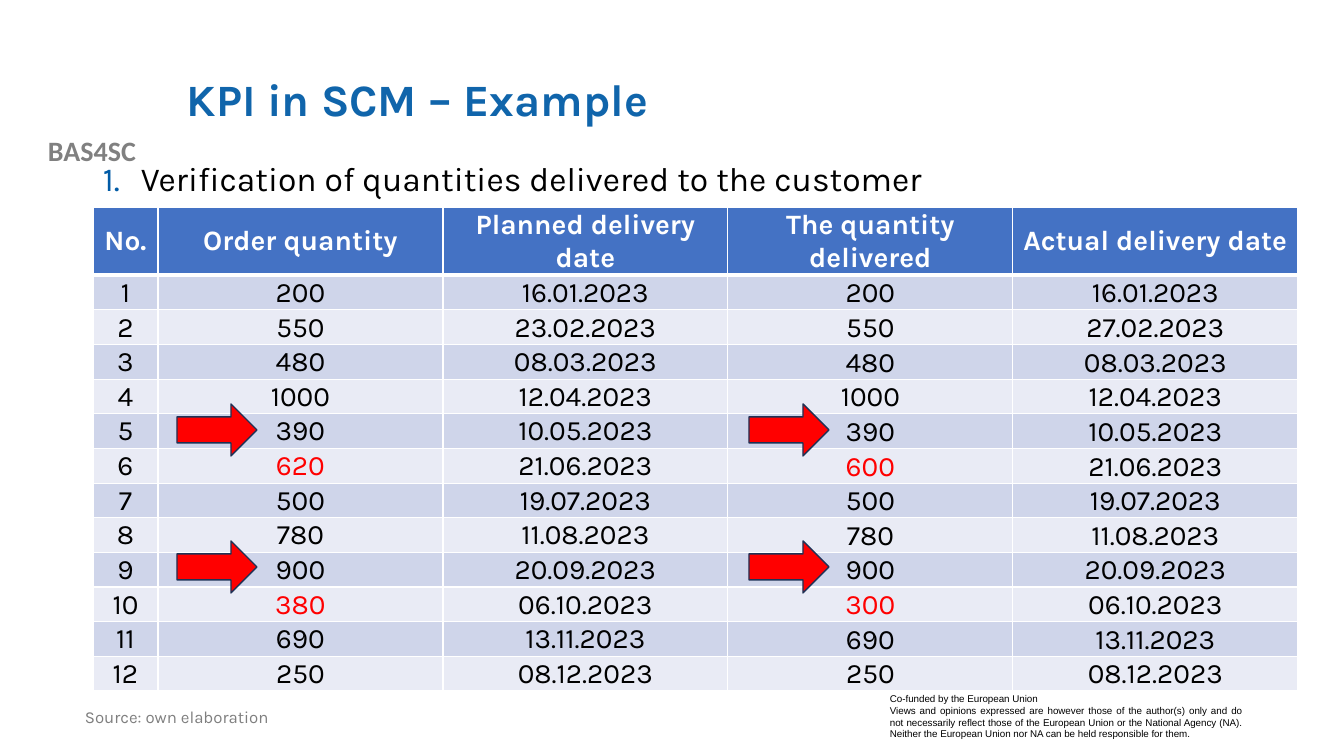
from lxml.etree import SubElement
from pptx import Presentation
from pptx.dml.color import RGBColor
from pptx.enum.shapes import MSO_SHAPE
from pptx.enum.text import MSO_ANCHOR, PP_ALIGN
from pptx.oxml.ns import qn
from pptx.util import Pt

COLORS = {
    "white": "FFFFFF", "black": "000000", "title": "1065AB", "number": "015BA6",
    "project": "808080", "source": "7F7F7F", "header": "4472C4",
    "odd": "CFD5EA", "even": "E9EBF5", "red": "FF0000", "outline": "1E3256",
}

PROJECT = "BAS4SC"
FUNDING = [
    "Co-funded by the European Union",
    "Views and opinions expressed are however those of the author(s) only and do not "
    "necessarily reflect those of the European Union or the National Agency (NA). "
    "Neither the European Union nor NA can be held responsible for them.",
]
TITLE = "KPI in SCM – Example"
TOPIC = "Verification of quantities delivered to the customer"
SOURCE = "Source: own elaboration"

HEADERS = ["No.", "Order quantity", "Planned delivery date",
           "The quantity delivered", "Actual delivery date"]
ORDERS = [  # ordered, planned date, delivered, actual date
    (200, "16.01.2023", 200, "16.01.2023"),
    (550, "23.02.2023", 550, "27.02.2023"),
    (480, "08.03.2023", 480, "08.03.2023"),
    (1000, "12.04.2023", 1000, "12.04.2023"),
    (390, "10.05.2023", 390, "10.05.2023"),
    (620, "21.06.2023", 600, "21.06.2023"),
    (500, "19.07.2023", 500, "19.07.2023"),
    (780, "11.08.2023", 780, "11.08.2023"),
    (900, "20.09.2023", 900, "20.09.2023"),
    (380, "06.10.2023", 300, "06.10.2023"),
    (690, "13.11.2023", 690, "13.11.2023"),
    (250, "08.12.2023", 250, "08.12.2023"),
]
QUANTITY_COLS = (1, 3)

TABLE_LEFT, TABLE_TOP = 93, 207
COL_WIDTHS = [65] + [285] * 4
ROW_HEIGHTS = [64] + [33] * len(ORDERS)
ARROW_LEFTS, ARROW_TOPS = (177, 749), (404, 541)
ARROW_SIZE = (80, 52)


def px(n):
    return round(n * 914400 / 100.8)


def rgb(name):
    return RGBColor.from_string(COLORS[name])


def set_all(obj, values):
    for name, value in values.items():
        setattr(obj, name, value)


def write(p, text, color, size, font="Karla", bold=False, **para):
    set_all(p, para)
    r = p.add_run()
    r.text = text
    set_all(r.font, {"name": font, "size": Pt(size), "bold": bold})
    r.font.color.rgb = rgb(color)


def add_text(slide, box, text, color, size, anchor=MSO_ANCHOR.TOP, **fmt):
    sp = slide.shapes.add_textbox(*map(px, box))
    tf = sp.text_frame
    set_all(tf, {"word_wrap": True, "vertical_anchor": anchor})
    write(tf.paragraphs[0], text, color, size, **fmt)
    return tf.paragraphs[0]


def add_number(p, hang):
    pPr = p._p.get_or_add_pPr()
    pPr.set("marL", str(px(hang)))
    pPr.set("indent", str(-px(hang)))
    clr = SubElement(pPr, qn("a:buClr"))
    SubElement(clr, qn("a:srgbClr"), val=COLORS["number"])
    SubElement(pPr, qn("a:buFont"), typeface="Karla")
    SubElement(pPr, qn("a:buAutoNum"), type="arabicPeriod")


def add_preset(slide, kind, box, fill, line=None):
    sp = slide.shapes.add_shape(kind, *map(px, box))
    sp.shadow.inherit = False
    sp.fill.solid()
    sp.fill.fore_color.rgb = rgb(fill)
    if line:
        sp.line.color.rgb = rgb(line)
        sp.line.width = Pt(1)
    else:
        sp.line.fill.background()
    return sp


def set_borders(cell, **widths):
    tcPr = cell._tc.get_or_add_tcPr()
    for side in "LRTB":
        ln = SubElement(tcPr, qn(f"a:ln{side}"), w=str(Pt(widths.get(side, 1))))
        fill = SubElement(ln, qn("a:solidFill"))
        SubElement(fill, qn("a:srgbClr"), val=COLORS["white"])


def add_order_table(slide):
    rows = [HEADERS] + [(n, *order) for n, order in enumerate(ORDERS, 1)]
    table = slide.shapes.add_table(
        len(rows), len(HEADERS), px(TABLE_LEFT), px(TABLE_TOP),
        px(sum(COL_WIDTHS)), px(sum(ROW_HEIGHTS))).table
    for col, width in zip(table.columns, COL_WIDTHS):
        col.width = px(width)
    for i, (row, values) in enumerate(zip(table.rows, rows)):
        row.height = px(ROW_HEIGHTS[i])
        header = i == 0
        fill = "header" if header else "odd" if i % 2 else "even"
        mismatch = not header and values[1] != values[3]
        for j, value in enumerate(values):
            cell = table.cell(i, j)
            bottom = not header and j >= 3
            set_all(cell, {
                "margin_left": px(1), "margin_right": px(1),
                "margin_top": px(1), "margin_bottom": 0,
                "vertical_anchor": MSO_ANCHOR.BOTTOM if bottom else MSO_ANCHOR.MIDDLE,
            })
            set_borders(cell, T=3 if i == 1 else 1, B=3 if header else 1)
            cell.fill.solid()
            cell.fill.fore_color.rgb = rgb(fill)
            color = "white" if header else "black"
            if mismatch and j in QUANTITY_COLS:
                color = "red"
            write(cell.text_frame.paragraphs[0], str(value), color, 20,
                  bold=header, alignment=PP_ALIGN.CENTER)


def add_funding(slide):
    sp = add_preset(slide, MSO_SHAPE.RECTANGLE, (880, 688, 372, 57), "white")
    tf = sp.text_frame
    set_all(tf, {"word_wrap": True, "vertical_anchor": MSO_ANCHOR.TOP})
    for i, line in enumerate(FUNDING):
        p = tf.add_paragraph() if i else tf.paragraphs[0]
        write(p, line, "black", 7, font="Arial", alignment=PP_ALIGN.JUSTIFY)


def main():
    prs = Presentation()
    prs.slide_width, prs.slide_height = px(1344), px(756)
    slide = prs.slides.add_slide(prs.slide_layouts[6])

    add_text(slide, (0, 129, 184, 44), PROJECT, "project", 20, font="Calibri",
             bold=True, alignment=PP_ALIGN.CENTER)
    add_funding(slide)
    add_text(slide, (177, 40, 1075, 123), TITLE, "title", 32, MSO_ANCHOR.MIDDLE,
             bold=True, line_spacing=0.9)
    topic = add_text(slide, (93, 158, 1233, 115), TOPIC, "black", 24,
                     alignment=PP_ALIGN.JUSTIFY, line_spacing=0.9)
    add_number(topic, 38)
    add_text(slide, (75, 704, 505, 52), SOURCE, "source", 12, line_spacing=0.9)
    add_order_table(slide)
    for top in ARROW_TOPS:
        for left in ARROW_LEFTS:
            add_preset(slide, MSO_SHAPE.RIGHT_ARROW, (left, top, *ARROW_SIZE),
                       "red", "outline")

    prs.save("out.pptx")


if __name__ == "__main__":
    main()
